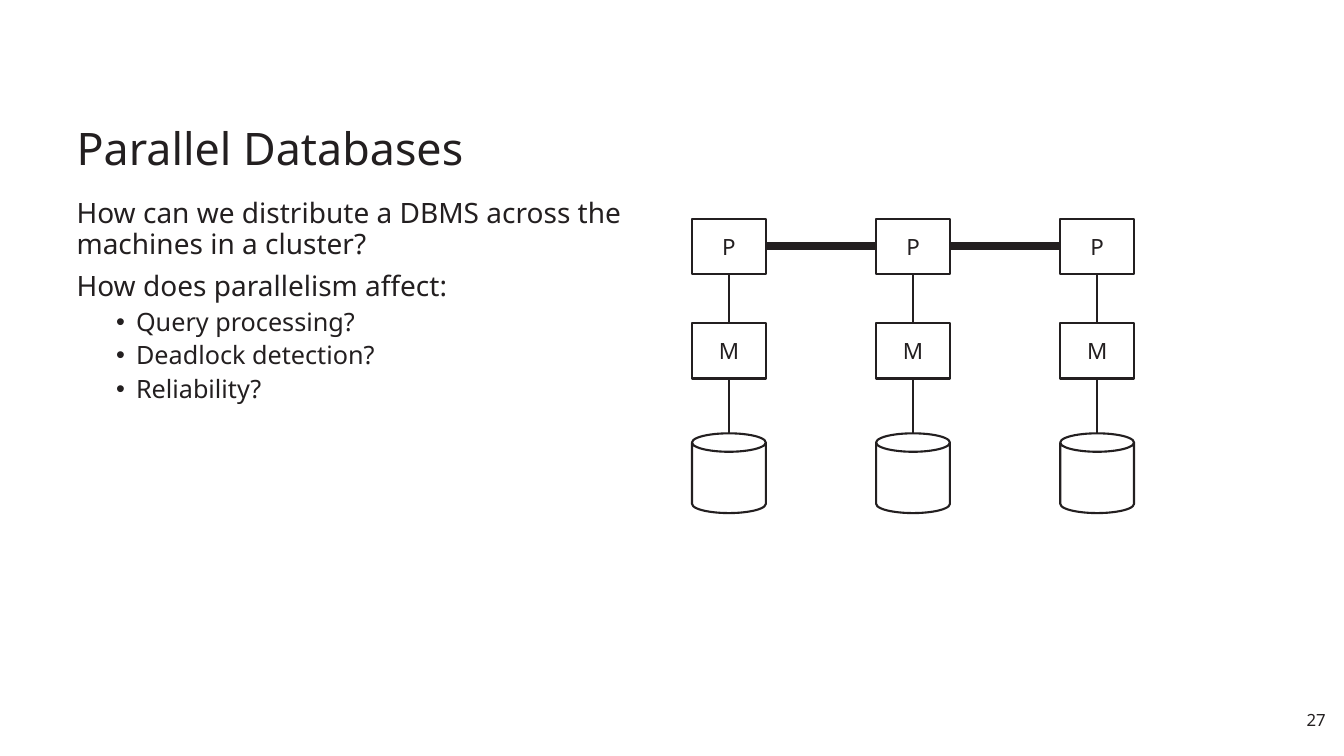
from dataclasses import dataclass

from lxml import etree
from pptx import Presentation, util as u
from pptx.dml.color import RGBColor
from pptx.enum import shapes, text
from pptx.oxml import ns

INK = RGBColor(0x23, 0x1F, 0x20)
WHITE = RGBColor(0xFF, 0xFF, 0xFF)
FONT = "Noto Sans"
OUTLINE = 1.5
BUS = 6

NODE_LEFT, NODE_PITCH, NODE_COUNT = 17.44, 4.64, 3
NODE_WIDTH = 1.86


@dataclass(frozen=True)
class Part:
    """One row of the diagram, repeated in every node; lengths in cm."""
    label: str
    kind: shapes.MSO_SHAPE
    top: float
    height: float


@dataclass(frozen=True)
class Line:
    content: str
    size: float
    space_before: float = 0
    bullet: bool = False


PROCESSOR = Part("P", shapes.MSO_SHAPE.RECTANGLE, 5.51, 1.39)
MEMORY = Part("M", shapes.MSO_SHAPE.RECTANGLE, 8.15, 1.39)
DISK = Part("", shapes.MSO_SHAPE.CAN, 10.92, 2.01)

BODY = [
    Line("How can we distribute a DBMS across the machines in a cluster?", 20),
    Line("How does parallelism affect:", 20, 9),
    Line("Query processing?", 18, 4.5, True),
    Line("Deadlock detection?", 18, 4.5, True),
    Line("Reliability?", 18, 4.5, True),
]


def add_bullet(paragraph) -> None:
    paragraph.level = 1
    properties = paragraph._p.get_or_add_pPr()
    properties.set("marL", str(u.Cm(1.5)))
    properties.set("indent", str(u.Cm(-0.5)))
    etree.SubElement(properties, ns.qn("a:buFont"), typeface="Arial")
    etree.SubElement(properties, ns.qn("a:buChar"), char="•")


def write(paragraph, content: str, *, size: float, align=text.PP_ALIGN.LEFT,
          spacing: float = 1.0, space_before: float = 0,
          bullet: bool = False) -> None:
    if bullet:
        add_bullet(paragraph)
    paragraph.alignment = align
    paragraph.line_spacing = spacing
    paragraph.space_before = u.Pt(space_before)
    run = paragraph.add_run()
    run.text = content
    run.font.name = FONT
    run.font.size = u.Pt(size)
    run.font.color.rgb = INK


def add_text_frame(slide, left: float, top: float, width: float, height: float,
                   anchor=text.MSO_ANCHOR.TOP, inset: float = 0.1):
    box = slide.shapes.add_textbox(u.Cm(left), u.Cm(top), u.Cm(width), u.Cm(height))
    frame = box.text_frame
    frame.word_wrap = True
    frame.vertical_anchor = anchor
    frame.margin_left = frame.margin_right = u.Cm(0.2)
    frame.margin_top = frame.margin_bottom = u.Cm(inset)
    return frame


def add_part(slide, part: Part, left: float):
    shape = slide.shapes.add_shape(part.kind, u.Cm(left), u.Cm(part.top),
                                   u.Cm(NODE_WIDTH), u.Cm(part.height))
    shape.shadow.inherit = False
    shape.fill.solid()
    shape.fill.fore_color.rgb = WHITE
    shape.line.color.rgb = INK
    shape.line.width = u.Pt(OUTLINE)
    if part.label:
        shape.text_frame.vertical_anchor = text.MSO_ANCHOR.MIDDLE
        write(shape.text_frame.paragraphs[0], part.label, size=16,
              align=text.PP_ALIGN.CENTER)
    return shape


def add_link(slide, begin, begin_site: int, end, end_site: int, width: float) -> None:
    """Link two shapes; a can is met at its top centre without being joined."""
    link = slide.shapes.add_connector(
        shapes.MSO_CONNECTOR.STRAIGHT,
        begin.left + begin.width // 2, begin.top + begin.height,
        end.left + end.width // 2, end.top)
    link.begin_connect(begin, begin_site)
    if end.auto_shape_type == shapes.MSO_SHAPE.RECTANGLE:
        link.end_connect(end, end_site)
    link.line.color.rgb = INK
    link.line.width = u.Pt(width)
    etree.SubElement(link._element.spPr, ns.qn("a:effectLst"))


def add_cluster(slide) -> None:
    """Draw the nodes, each a processor, memory and disk, and the bus between them."""
    previous = None
    for index in range(NODE_COUNT):
        left = NODE_LEFT + index * NODE_PITCH
        processor, memory, disk = (add_part(slide, part, left)
                                   for part in (PROCESSOR, MEMORY, DISK))
        add_link(slide, processor, 2, memory, 0, OUTLINE)
        add_link(slide, memory, 2, disk, 0, OUTLINE)
        if previous is not None:
            add_link(slide, previous, 3, processor, 1, BUS)
        previous = processor


def main() -> None:
    presentation = Presentation()
    presentation.slide_width = u.Cm(33.87)
    presentation.slide_height = u.Cm(19.05)
    slide = presentation.slides.add_slide(presentation.slide_layouts[6])

    number = add_text_frame(slide, 32.13, 17.73, 1.48, 0.79, inset=0.15)
    write(number.paragraphs[0], "27", size=12, align=text.PP_ALIGN.RIGHT)

    title = add_text_frame(slide, 1.73, 1.93, 30.4, 2.59, text.MSO_ANCHOR.BOTTOM)
    write(title.paragraphs[0], "Parallel Databases", size=32, spacing=0.9)

    body = add_text_frame(slide, 1.73, 4.93, 15.01, 12.4)
    for index, line in enumerate(BODY):
        paragraph = body.add_paragraph() if index else body.paragraphs[0]
        write(paragraph, line.content, size=line.size, spacing=0.9,
              space_before=line.space_before, bullet=line.bullet)

    add_cluster(slide)
    presentation.save("out.pptx")


if __name__ == "__main__":
    main()
